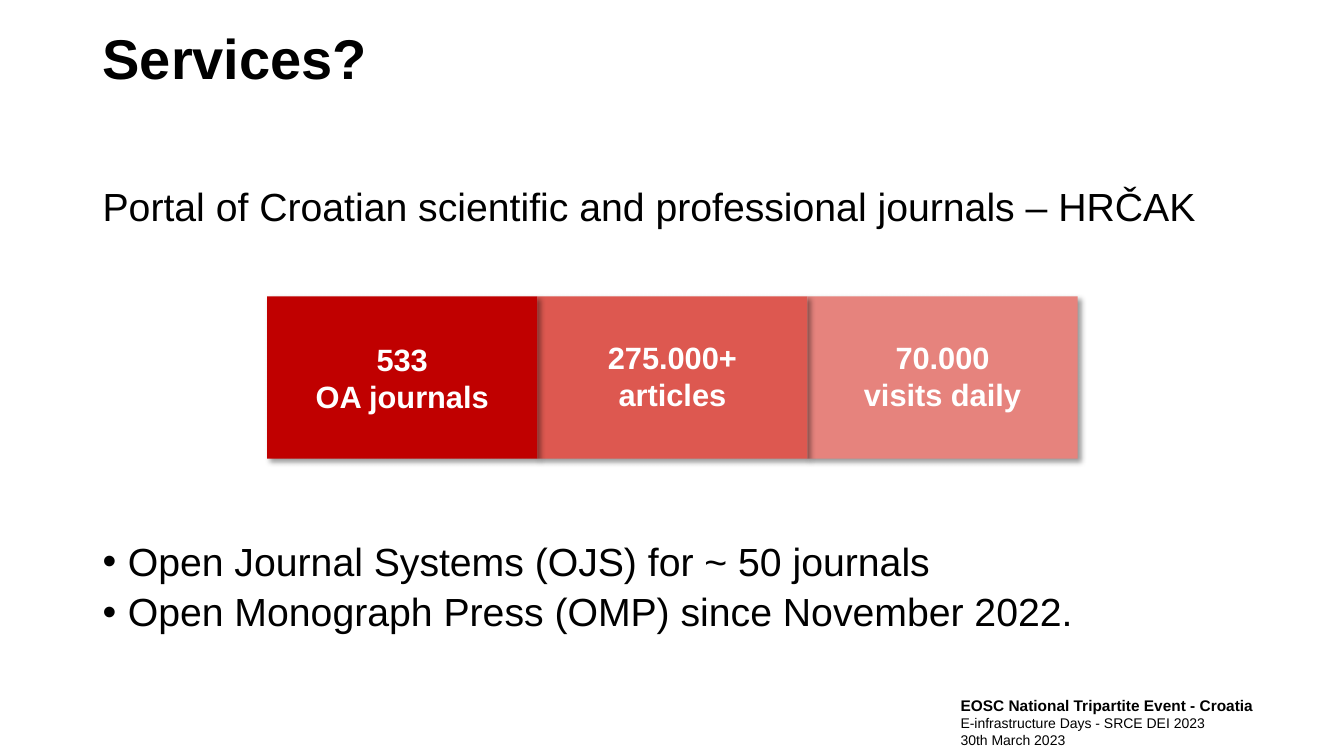
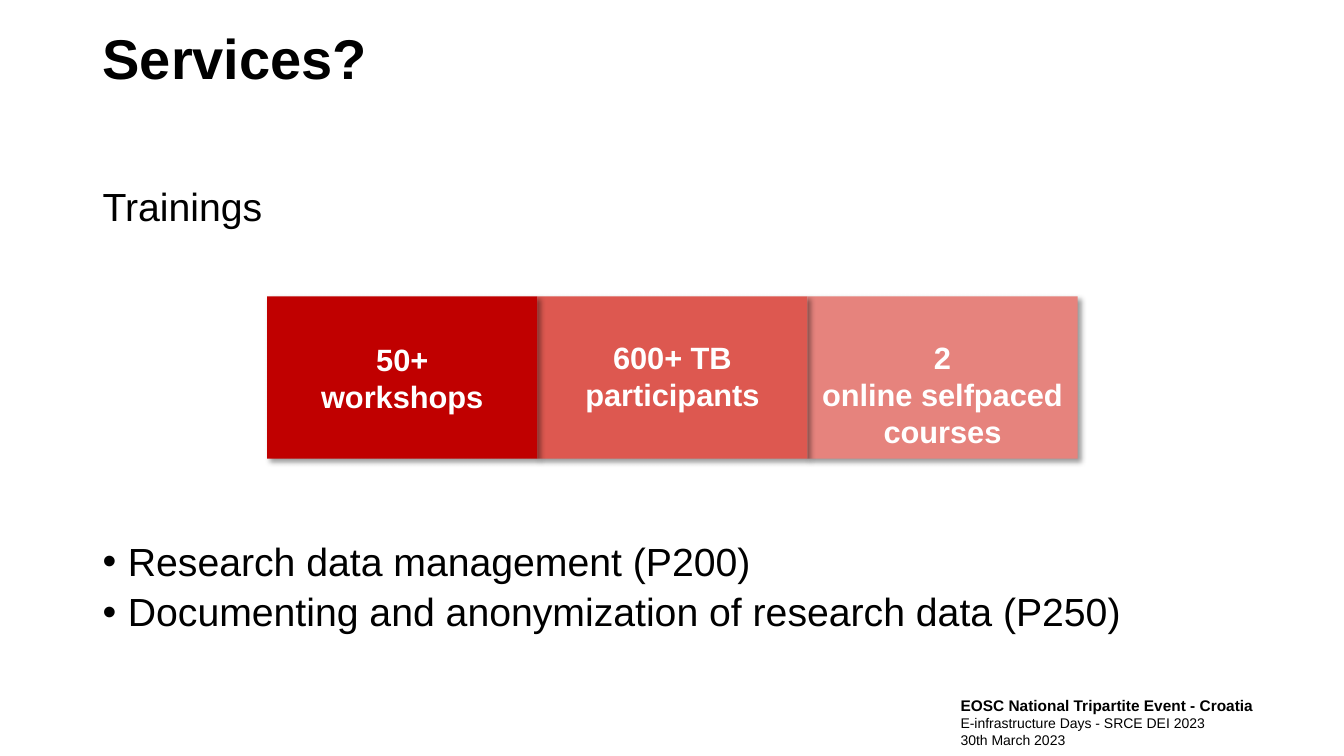
from lxml.etree import SubElement
from pptx import Presentation
from pptx.dml.color import RGBColor
from pptx.enum.shapes import MSO_SHAPE as Shape
from pptx.enum.text import MSO_ANCHOR as Anchor, PP_ALIGN as Align
from pptx.oxml.ns import qn
from pptx.util import Inches, Pt

# Shared style
FONT = "Arial"
BLACK, WHITE = "000000", "FFFFFF"
CARD_FILLS = ["C00000", "DD5850", "E6837D"]
MARGIN = 6.9  # left edge, percent of slide width
BODY_WIDTH = 86.27
CARDS_LEFT, CARD_WIDTH = 19.88, 20.1
FOOTER = [
    ("EOSC National Tripartite Event - Croatia", 11, True),
    ("E-infrastructure Days - SRCE DEI 2023", 10, False),
    ("30th March 2023", 10, False),
]

# Content
TITLE = "Services?"
SERVICES = [
    (
        "Portal of Croatian scientific and professional journals – HRČAK",
        [("533", "OA journals"), ("275.000+", "articles"), ("70.000", "visits daily")],
        ["Open Journal Systems (OJS) for ~ 50 journals",
         "Open Monograph Press (OMP) since November 2022."],
    ),
    (
        "Trainings",
        [("50+", "workshops"), ("600+ TB", "participants"),
         ("2", "online selfpaced courses")],
        ["Research data management (P200)",
         "Documenting and anonymization of research data (P250)"],
    ),
]


def colour(hex_code):
    return RGBColor.from_string(hex_code)


class Deck:
    """Holds the style and the current slide; lengths are percent of the slide."""

    def __init__(self):
        self.prs = Presentation()
        self.prs.slide_width, self.prs.slide_height = Inches(13.33), Inches(7.5)
        self.slide = None

    def place(self, left, top, width, height):
        across, down = self.prs.slide_width / 100, self.prs.slide_height / 100
        return (round(left * across), round(top * down),
                round(width * across), round(height * down))

    def new_slide(self):
        self.slide = self.prs.slides.add_slide(self.prs.slide_layouts[6])
        self.footer()

    def fill_text(self, frame, lines, ink=BLACK, align=Align.LEFT, spacing=None,
                  before=0, bullet=False):
        """Set (text, size, bold) lines, one paragraph each."""
        frame.word_wrap = True
        for index, (text, size, bold) in enumerate(lines):
            para = frame.add_paragraph() if index else frame.paragraphs[0]
            para.alignment = align
            if spacing:
                para.line_spacing = spacing
            if index and before:
                para.space_before = Pt(before)
            if bullet:
                props = para._p.get_or_add_pPr()
                props.set("marL", str(Inches(0.25)))
                props.set("indent", str(-Inches(0.25)))
                SubElement(props, qn("a:buFont"), typeface=FONT)
                SubElement(props, qn("a:buChar"), char="•")
            run = para.add_run()
            run.text = text
            run.font.name, run.font.size, run.font.bold = FONT, Pt(size), bold
            run.font.color.rgb = colour(ink)

    def text(self, area, lines, anchor=Anchor.TOP, **style):
        frame = self.slide.shapes.add_textbox(*self.place(*area)).text_frame
        frame.vertical_anchor = anchor
        self.fill_text(frame, lines, **style)

    def footer(self):
        self.text((70.73, 91.47, 23.63, 8.27), FOOTER)

    def title(self, words):
        self.text((MARGIN, 1.73, 72, 12.8), [(words, 40, True)],
                  anchor=Anchor.MIDDLE, spacing=0.9)

    def intro(self, words):
        self.text((MARGIN, 24.13, BODY_WIDTH, 8), [(words, 28, False)], spacing=0.9)

    def bullets(self, items):
        self.text((MARGIN, 71.07, BODY_WIDTH, 15), [(item, 28, False) for item in items],
                  spacing=0.9, before=6, bullet=True)

    def shadow(self, shape):
        shape.shadow.inherit = False
        effects = shape._element.spPr.find(qn("a:effectLst"))
        outer = SubElement(effects, qn("a:outerShdw"), blurRad=str(Pt(4)),
                           dist=str(Pt(3)), dir="2700000", algn="tl", rotWithShape="0")
        shade = SubElement(outer, qn("a:srgbClr"), val=BLACK)
        SubElement(shade, qn("a:alpha"), val="40000")

    def card(self, column, figure, label):
        left = CARDS_LEFT + column * CARD_WIDTH
        card = self.slide.shapes.add_shape(
            Shape.RECTANGLE, *self.place(left, 39.2, CARD_WIDTH, 21.47))
        card.fill.solid()
        card.fill.fore_color.rgb = colour(CARD_FILLS[column])
        card.line.fill.background()
        self.shadow(card)
        frame = card.text_frame
        frame.vertical_anchor = Anchor.TOP
        frame.margin_top = Inches(0.42 if column else 0.44)
        self.fill_text(frame, [(figure, 22, True), (label, 22, True)],
                       ink=WHITE, align=Align.CENTER)

    def cards(self, facts):
        # Right to left, so each shadow falls on the next card
        for column, fact in reversed(list(enumerate(facts))):
            self.card(column, *fact)


def main():
    deck = Deck()
    for intro, facts, items in SERVICES:
        deck.new_slide()
        deck.title(TITLE)
        deck.intro(intro)
        deck.cards(facts)
        deck.bullets(items)
    deck.prs.save("out.pptx")


if __name__ == "__main__":
    main()
